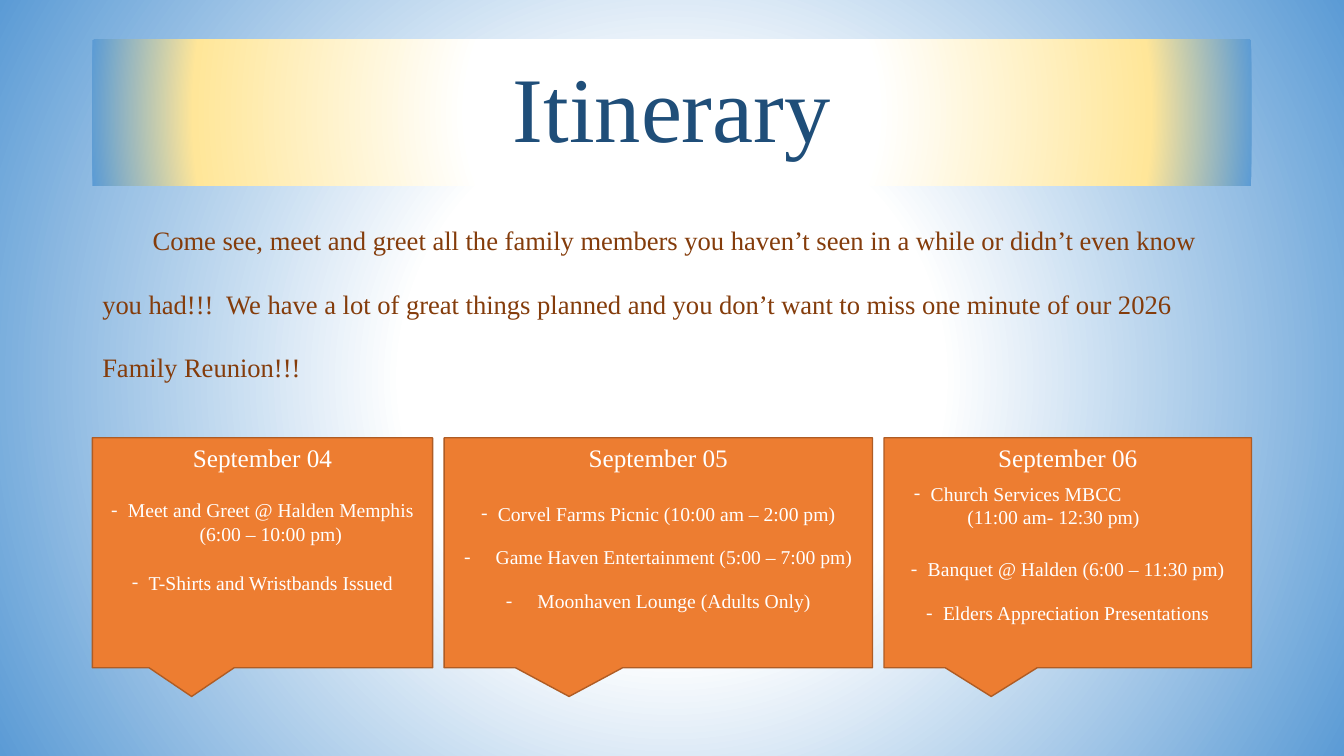
"""Build the family reunion itinerary slide."""
from dataclasses import dataclass

from lxml import etree
from pptx import Presentation
from pptx.dml.color import RGBColor
from pptx.enum.shapes import MSO_SHAPE
from pptx.enum.text import MSO_ANCHOR, PP_ALIGN
from pptx.oxml.ns import qn
from pptx.util import Pt

EMU_PER_PX = 9525
FONT = "Times New Roman"
WHITE = RGBColor(0xFF, 0xFF, 0xFF)
SKY = RGBColor(0x5B, 0x9B, 0xD5)
CREAM = RGBColor(0xFF, 0xE6, 0x99)
NAVY = RGBColor(0x1F, 0x4E, 0x79)
BROWN = RGBColor(0x84, 0x3C, 0x0B)
ORANGE = RGBColor(0xED, 0x7D, 0x31)
RUST = RGBColor(0xAF, 0x5C, 0x24)
RECTANGLE = MSO_SHAPE.RECTANGLE
CALLOUT = MSO_SHAPE.RECTANGULAR_CALLOUT
TOP, MIDDLE = MSO_ANCHOR.TOP, MSO_ANCHOR.MIDDLE
LEFT, CENTER = PP_ALIGN.LEFT, PP_ALIGN.CENTER

MARGIN, CONTENT_WIDTH = 88, 1104
CARD_TOP, CARD_HEIGHT, CARD_GAP = 417, 219, 11
INTRO = (
    "Come see, meet and greet all the family members you haven’t seen in a while "
    "or didn’t even know you had!!!  We have a lot of great things planned and you "
    "don’t want to miss one minute of our 2026 Family Reunion!!!"
)


@dataclass(frozen=True)
class Line:
    """One paragraph, with indents in px and spacing in points."""

    text: str
    size: int = 14
    color: RGBColor = WHITE
    align: PP_ALIGN = CENTER
    margin: int = 0
    indent: int = 0
    bullet: bool = False
    spacing: float = 1.0
    before: int = 0
    after: int = 0


@dataclass(frozen=True)
class Day:
    """One callout card of the itinerary."""

    date: str
    width: int
    events: tuple[Line, ...]


def event(text: str, hang: int = 16, spacing: float = 1.5, before: int = 6, after: int = 0) -> Line:
    """Return a centred event with a dash bullet."""
    return Line(text, margin=hang, indent=-hang, bullet=True, spacing=spacing, before=before, after=after)


DAYS = (
    Day("September 04", 324, (
        event("Meet and Greet @ Halden Memphis (6:00 – 10:00 pm)", spacing=1, before=12, after=6),
        event("T-Shirts and Wristbands Issued", spacing=1, before=12, after=6),
    )),
    Day("September 05", 408, (
        event("Corvel Farms Picnic (10:00 am – 2:00 pm)"),
        event("Game Haven Entertainment (5:00 – 7:00 pm)", hang=30),
        event("Moonhaven Lounge (Adults Only)", hang=30),
    )),
    Day("September 06", 350, (
        Line("Church Services MBCC", align=LEFT, margin=35, indent=-16, bullet=True),
        Line("(11:00 am- 12:30 pm)", align=LEFT, margin=70, after=6),
        event("Banquet @ Halden (6:00 – 11:30 pm)"),
        event("Elders Appreciation Presentations"),
    )),
)


def px(length: int) -> int:
    """Convert px to EMU."""
    return length * EMU_PER_PX


def apply_radial_gradient(parent, stops: tuple[tuple[int, RGBColor], ...]) -> None:
    """Replace the solid fill in an element by a centred circular gradient."""
    gradient = etree.Element(qn("a:gradFill"), rotWithShape="1")
    stop_list = etree.SubElement(gradient, qn("a:gsLst"))
    for percent, color in stops:
        stop = etree.SubElement(stop_list, qn("a:gs"), pos=str(percent * 1000))
        etree.SubElement(stop, qn("a:srgbClr"), val=str(color))
    circle = etree.SubElement(gradient, qn("a:path"))
    circle.set("path", "circle")
    etree.SubElement(circle, qn("a:fillToRect"), l="50000", t="50000", r="50000", b="50000")
    parent.replace(parent.find(qn("a:solidFill")), gradient)


def write_lines(text_frame, lines: tuple[Line, ...], anchor: MSO_ANCHOR = TOP) -> None:
    """Fill a text frame with formatted paragraphs."""
    text_frame.word_wrap = True
    text_frame.vertical_anchor = anchor
    for index, line in enumerate(lines):
        paragraph = text_frame.add_paragraph() if index else text_frame.paragraphs[0]
        paragraph.text = line.text
        paragraph.alignment = line.align
        paragraph.line_spacing = line.spacing
        paragraph.space_before = Pt(line.before)
        paragraph.space_after = Pt(line.after)
        properties = paragraph._p.get_or_add_pPr()
        properties.set("marL", str(px(line.margin)))
        properties.set("indent", str(px(line.indent)))
        if line.bullet:
            etree.SubElement(properties, qn("a:buFont"), typeface=FONT)
            etree.SubElement(properties, qn("a:buChar"), char="-")
        for run in paragraph.runs:
            run.font.name = FONT
            run.font.size = Pt(line.size)
            run.font.color.rgb = line.color


def add_title(slide) -> None:
    """Draw the gradient title banner."""
    shape = slide.shapes.add_shape(RECTANGLE, px(MARGIN), px(38), px(CONTENT_WIDTH), px(139))
    shape.shadow.inherit = False
    shape.line.fill.background()
    shape.fill.solid()
    apply_radial_gradient(shape.element.spPr, ((0, WHITE), (35, WHITE), (82, CREAM), (100, SKY)))
    write_lines(shape.text_frame, (Line("Itinerary", 66, NAVY, spacing=0.9),), MIDDLE)


def add_intro(slide) -> None:
    """Write the welcome paragraph."""
    shape = slide.shapes.add_textbox(px(MARGIN), px(178), px(CONTENT_WIDTH), px(527))
    write_lines(shape.text_frame, (Line(INTRO, 19, BROWN, LEFT, indent=48, spacing=2),))


def add_day(slide, day: Day, left: int) -> None:
    """Draw one day as a callout card."""
    shape = slide.shapes.add_shape(CALLOUT, px(left), px(CARD_TOP), px(day.width), px(CARD_HEIGHT))
    shape.shadow.inherit = False
    shape.fill.solid()
    shape.fill.fore_color.rgb = ORANGE
    shape.line.color.rgb = RUST
    shape.line.width = Pt(1)
    write_lines(shape.text_frame, (Line(day.date, 18, after=6), *day.events))


def main() -> None:
    """Build and save the presentation."""
    presentation = Presentation()
    presentation.slide_width, presentation.slide_height = px(1280), px(720)
    slide = presentation.slides.add_slide(presentation.slide_layouts[6])
    slide.background.fill.solid()
    background = slide.element.find(f".//{qn('p:bgPr')}")
    apply_radial_gradient(background, ((0, WHITE), (35, WHITE), (100, SKY)))
    add_title(slide)
    add_intro(slide)
    left = MARGIN
    for day in DAYS:
        add_day(slide, day, left)
        left += day.width + CARD_GAP
    presentation.save("out.pptx")


if __name__ == "__main__":
    main()
